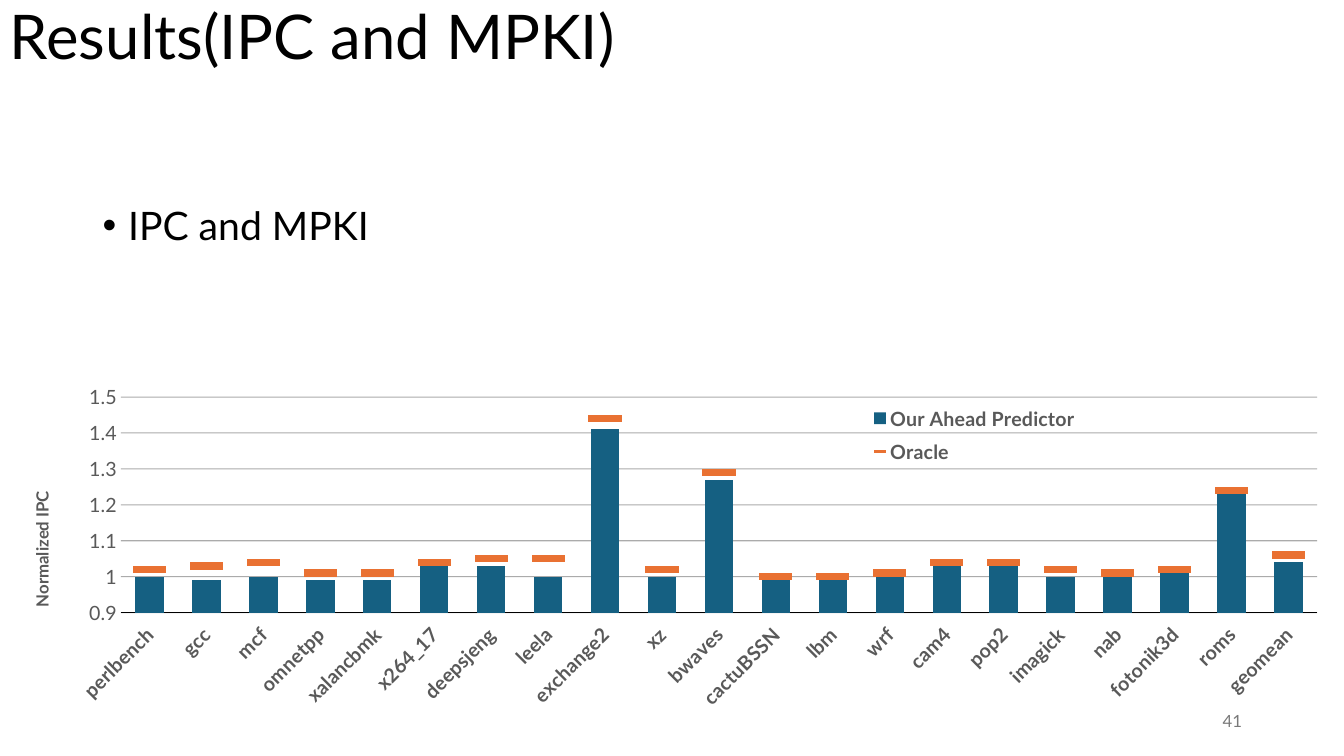
from lxml import etree
from pptx import Presentation, util as u
from pptx.chart.data import CategoryChartData
from pptx.dml.color import RGBColor
from pptx.enum import chart as ch, text
from pptx.oxml import parse_xml
from pptx.oxml.ns import nsdecls, qn

BLACK = RGBColor(0x00, 0x00, 0x00)
WHITE = RGBColor(0xFF, 0xFF, 0xFF)
DARK = RGBColor(0x59, 0x59, 0x59)
GRID = RGBColor(0x74, 0x74, 0x74)
PALE = RGBColor(0x79, 0x79, 0x79)
TEAL = RGBColor(0x15, 0x60, 0x82)
ORANGE = RGBColor(0xE9, 0x71, 0x32)

NAMES = ["perlbench", "gcc", "mcf", "omnetpp", "xalancbmk", "x264_17", "deepsjeng",
         "leela", "exchange2", "xz", "bwaves", "cactuBSSN", "lbm", "wrf", "cam4",
         "pop2", "imagick", "nab", "fotonik3d", "roms", "geomean"]
AHEAD = [1, 0.99, 1, 0.99, 0.99, 1.03, 1.03, 1, 1.41, 1, 1.27,
         1, 1, 1, 1.03, 1.03, 1, 1.01, 1.01, 1.23, 1.04]
ORACLE = [1.02, 1.03, 1.04, 1.01, 1.01, 1.04, 1.05, 1.05, 1.44, 1.02, 1.29,
          1, 1, 1.01, 1.04, 1.04, 1.02, 1.01, 1.02, 1.24, 1.06]


def place(part, index, inner=False, **spots):
    """Give a chart part a fixed place, in fractions of the chart."""
    for old in part.findall(qn("c:layout")):
        part.remove(old)
    layout = etree.Element(qn("c:layout"))
    manual = etree.SubElement(layout, qn("c:manualLayout"))
    if inner:
        etree.SubElement(manual, qn("c:layoutTarget"), val="inner")
    for key in "xy":
        etree.SubElement(manual, qn(f"c:{key}Mode"), val="edge")
    for key, value in spots.items():
        etree.SubElement(manual, qn(f"c:{key}"), val=str(value))
    part.insert(index, layout)


class Deck:
    face = "Lato"

    def __init__(self):
        self.show = Presentation()
        self.show.slide_width = u.Cm(33.87)
        self.show.slide_height = u.Cm(19.05)
        self.slide = self.show.slides.add_slide(self.show.slide_layouts[6])

    def style(self, font, size, color, bold=False):
        font.name, font.size, font.bold = self.face, u.Pt(size), bold
        font.color.rgb = color

    def label(self, words, box, size, color=BLACK, anchor=text.MSO_ANCHOR.MIDDLE,
              align=text.PP_ALIGN.LEFT, spacing=0.9, bullet=False):
        frame = self.slide.shapes.add_textbox(*map(u.Cm, box)).text_frame
        frame.word_wrap = True
        frame.vertical_anchor = anchor
        para = frame.paragraphs[0]
        para.text = words
        para.alignment = align
        para.line_spacing = spacing
        if bullet:
            props = para._p.get_or_add_pPr()
            props.set("marL", str(u.Cm(0.64)))
            props.set("indent", str(-u.Cm(0.64)))
            etree.SubElement(props, qn("a:buFont"), typeface="Arial")
            etree.SubElement(props, qn("a:buChar"), char="•")
        self.style(para.font, size, color)

    def plot(self, box, names, bars, dashes):
        data = CategoryChartData()
        data.categories = names
        for label, values in (bars, dashes):
            data.add_series(label, values)
        chart = self.slide.shapes.add_chart(
            ch.XL_CHART_TYPE.COLUMN_CLUSTERED, *map(u.Cm, box), data).chart
        self.style(chart.font, 10, BLACK)
        chart.has_title = False
        chart._chartSpace.find(qn("c:txPr")).addprevious(parse_xml(
            f'<c:spPr {nsdecls("c", "a")}><a:solidFill><a:srgbClr val="{WHITE}"/>'
            '</a:solidFill><a:ln><a:noFill/></a:ln></c:spPr>'))
        self.combine(chart)
        self.axes(chart)

        # Legend
        chart.has_legend = True
        chart.legend.position = ch.XL_LEGEND_POSITION.BOTTOM
        chart.legend.include_in_layout = False
        self.style(chart.legend.font, 14, DARK, True)
        place(chart.legend._element, 1, x=0.64, y=0.05, w=0.17, h=0.2)

    def combine(self, chart):
        """Turn the second column series into a line that shows only dashes."""
        columns = chart.plots[0]
        columns.gap_width = 100
        columns.vary_by_categories = False
        node = columns.series[1]._element
        for child in node.findall(qn("c:invertIfNegative")):
            node.remove(child)
        line = parse_xml(f'<c:lineChart {nsdecls("c")}><c:grouping val="standard"/>'
                         '<c:varyColors val="0"/></c:lineChart>')
        line.append(node)
        etree.SubElement(line, qn("c:marker"), val="1")
        group = columns._element
        for axis in group.findall(qn("c:axId")):
            etree.SubElement(line, qn("c:axId"), val=axis.get("val"))
        group.addnext(line)
        place(group.getparent(), 0, True, x=0.09, y=0.05, w=0.89, h=0.57)

        fill = columns.series[0].format.fill
        fill.solid()
        fill.fore_color.rgb = TEAL
        oracle = chart.plots[1].series[0]
        oracle.smooth = False
        oracle.format.line.fill.background()
        mark = oracle.marker
        mark.style, mark.size = ch.XL_MARKER_STYLE.DASH, 23
        mark.format.fill.solid()
        mark.format.fill.fore_color.rgb = ORANGE
        mark.format.line.fill.background()

    def axes(self, chart):
        for axis, bold in ((chart.category_axis, True), (chart.value_axis, False)):
            axis.major_tick_mark = axis.minor_tick_mark = ch.XL_TICK_MARK.NONE
            self.style(axis.tick_labels.font, 14, DARK, bold)

        base = chart.category_axis
        base.tick_label_position = ch.XL_TICK_LABEL_POSITION.LOW
        base.format.line.color.rgb = BLACK
        base.format.line.width = u.Pt(0.75)
        base._element.find(qn("c:txPr")).find(qn("a:bodyPr")).set("rot", "-2700000")

        scale = chart.value_axis
        scale.minimum_scale, scale.maximum_scale, scale.major_unit = 0.9, 1.5, 0.1
        scale.format.line.fill.background()
        scale.has_major_gridlines = True
        rule = scale.major_gridlines.format.line
        rule.color.rgb = GRID
        rule.width = u.Pt(0.75)
        tint = scale._element.xpath("c:majorGridlines//a:srgbClr")[0]
        etree.SubElement(tint, qn("a:alpha"), val="60000")

        title = scale.axis_title
        title.text_frame.text = "Normalized IPC"
        self.style(title.text_frame.paragraphs[0].font, 12, DARK, True)
        title.text_frame._txBody.bodyPr.set("rot", "-5400000")
        place(title._element, 1, x=0.02, y=0.29)


def main():
    deck = Deck()
    # Body text
    deck.label("IPC and MPKI", (2.34, 5.08, 29.21, 12.09), 28,
               anchor=text.MSO_ANCHOR.TOP, bullet=True)
    # Chart
    deck.plot((0, 9.53, 33.87, 9.53), NAMES,
              ("Our Ahead Predictor", AHEAD), ("Oracle", ORACLE))
    # Title and slide number
    deck.label("Results(IPC and MPKI)", (0, -0.84, 29.21, 3.68), 44)
    deck.label("41", (23.93, 17.65, 7.62, 1.02), 12, PALE,
               align=text.PP_ALIGN.RIGHT, spacing=1)
    deck.show.save("out.pptx")


if __name__ == "__main__":
    main()
